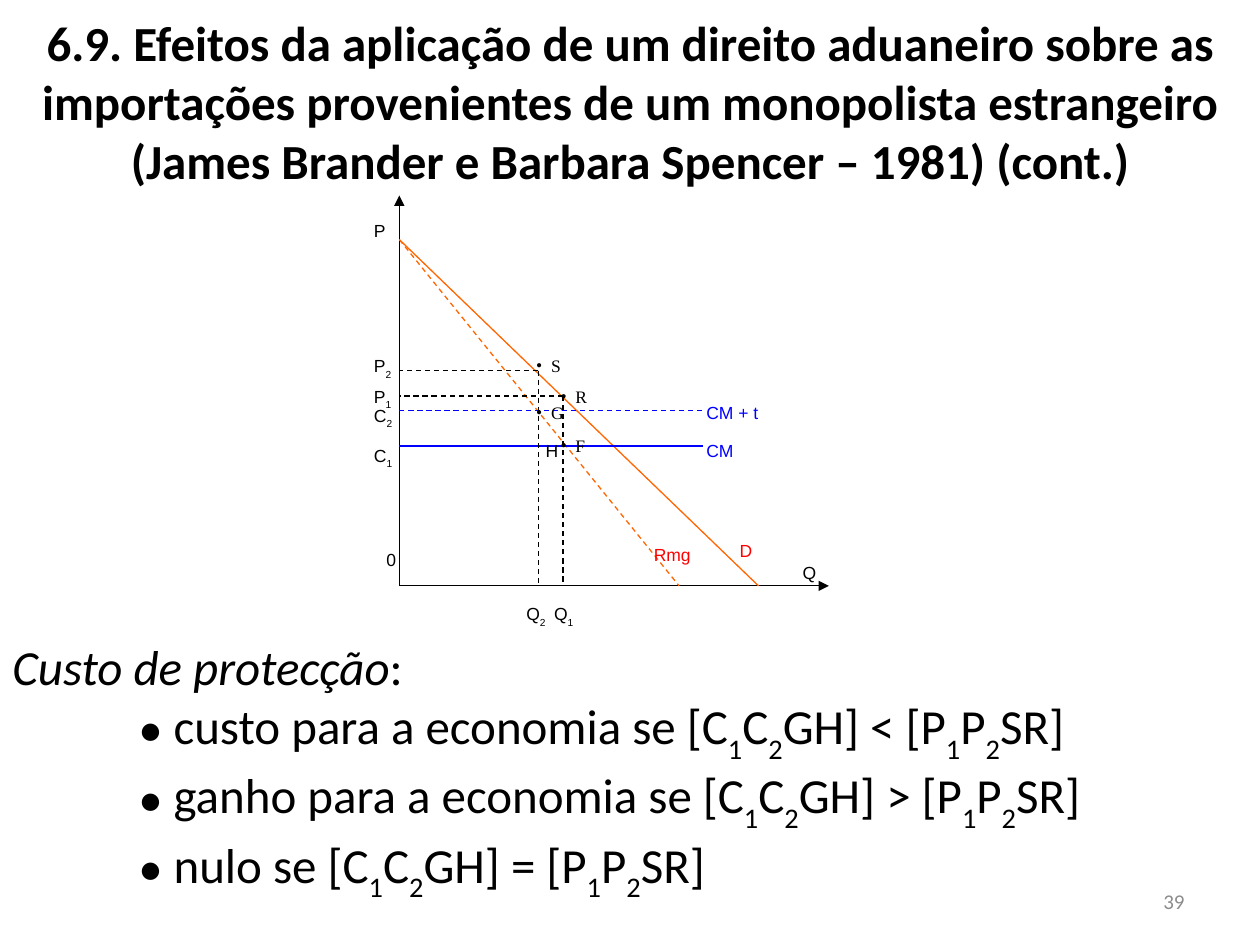
"""Slide on the effects of a tariff on imports from a foreign monopolist."""
from dataclasses import dataclass

from lxml import etree
from pptx import Presentation
from pptx import util as u
from pptx.dml.color import RGBColor
from pptx.enum import dml, shapes, text
from pptx.oxml.ns import qn


@dataclass(frozen=True)
class Theme:
    black: str = "000000"
    grey: str = "8C8C8C"
    orange: str = "FF6600"
    blue: str = "0000FF"
    red: str = "FF0000"
    body_font: str = "Calibri"
    label_font: str = "Arial"
    point_font: str = "Times New Roman"
    body_size: int = 28
    number_size: int = 12
    label_size: int = 10
    line_width: float = 0.75


class SlideBuilder:
    def __init__(self, slide, theme):
        self.slide = slide
        self.theme = theme

    def line(self, start, end, color, dashed=False, arrow=False):
        connector = self.slide.shapes.add_connector(
            shapes.MSO_CONNECTOR.STRAIGHT, *(u.Cm(value) for value in (*start, *end)))
        connector.line.color.rgb = RGBColor.from_string(color)
        connector.line.width = u.Pt(self.theme.line_width)
        if dashed:
            connector.line.dash_style = dml.MSO_LINE.DASH
        if arrow:
            etree.SubElement(connector.line._get_or_add_ln(), qn("a:tailEnd"), type="triangle")
        etree.SubElement(connector._element.spPr, qn("a:effectLst"))

    def text_box(self, left, top, width, height, anchor=text.MSO_ANCHOR.TOP, grow=False):
        box = self.slide.shapes.add_textbox(*(u.Cm(value) for value in (left, top, width, height)))
        frame = box.text_frame
        frame.word_wrap = True
        frame.vertical_anchor = anchor
        if grow:
            frame.auto_size = text.MSO_AUTO_SIZE.SHAPE_TO_FIT_TEXT
        return frame

    def run(self, paragraph, content, font, size, color, bold=False, italic=False, subscript=False):
        run = paragraph.add_run()
        run.text = content
        run.font.name = font
        run.font.size = u.Pt(size)
        run.font.bold = bold
        run.font.italic = italic
        run.font.color.rgb = RGBColor.from_string(color)
        if subscript:
            run._r.get_or_add_rPr().set("baseline", "-30000")

    def formula(self, paragraph, content, *style):
        """Add runs, setting the character after each underscore as a subscript."""
        first, *others = content.split("_")
        self.run(paragraph, first, *style)
        for part in others:
            self.run(paragraph, part[0], *style, subscript=True)
            if part[1:]:
                self.run(paragraph, part[1:], *style)

    def bullet(self, paragraph, margin, hanging, font):
        properties = paragraph._p.get_or_add_pPr()
        properties.set("marL", str(u.Cm(margin)))
        properties.set("indent", str(u.Cm(-hanging)))
        etree.SubElement(properties, qn("a:buFont"), typeface=font)
        etree.SubElement(properties, qn("a:buChar"), char="•")

    def label(self, content, left, top, color):
        frame = self.text_box(left, top, 1.78, 0.76)
        self.formula(frame.paragraphs[0], content, self.theme.label_font, self.theme.label_size, color)

    def point(self, name, left, top):
        theme = self.theme
        paragraph = self.text_box(left, top, 1.78, 0.76).paragraphs[0]
        self.bullet(paragraph, 0.5, 0.3, theme.point_font)
        self.run(paragraph, name, theme.point_font, theme.label_size, theme.black)

    def title(self, content):
        theme = self.theme
        paragraph = self.text_box(0, 0.13, 25.4, 3.84, grow=True).paragraphs[0]
        paragraph.alignment = text.PP_ALIGN.CENTER
        self.run(paragraph, content, theme.body_font, theme.body_size, theme.black, bold=True)

    def slide_number(self, number):
        theme = self.theme
        paragraph = self.text_box(18.21, 17.65, 5.92, 1.02, text.MSO_ANCHOR.MIDDLE).paragraphs[0]
        paragraph.alignment = text.PP_ALIGN.RIGHT
        self.run(paragraph, number, theme.body_font, theme.number_size, theme.grey)

    def conclusions(self, heading, items):
        theme = self.theme
        style = theme.body_font, theme.body_size, theme.black
        frame = self.text_box(0, 13, 25.4, 5.05, text.MSO_ANCHOR.MIDDLE, grow=True)
        self.run(frame.paragraphs[0], heading, *style, italic=True)
        self.run(frame.paragraphs[0], ":", *style)
        for item in items:
            paragraph = frame.add_paragraph()
            self.bullet(paragraph, 3.25, 0.71, theme.body_font)
            self.formula(paragraph, item, *style)


def draw_diagram(builder):
    theme = builder.theme
    axis_x, axis_y = 8.05, 11.81
    origin, choke = (axis_x, axis_y), (axis_x, 4.83)

    for end in ((axis_x, 3.94), (16.71, axis_y)):
        builder.line(origin, end, theme.black, arrow=True)
    for foot, dashed in ((15.29, False), (13.69, True)):
        builder.line(choke, (foot, axis_y), theme.orange, dashed)
    for cost, dashed in ((8.99, False), (8.28, True)):
        builder.line((axis_x, cost), (14.17, cost), theme.blue, dashed)
    for quantity, price in ((11.35, 7.98), (10.85, 7.47)):
        for end in ((quantity, axis_y), (axis_x, price)):
            builder.line((quantity, price), end, theme.black, dashed=True)

    for name, left, top in (("S", 10.36, 7.04), ("R", 10.85, 7.65),
                            ("G", 10.36, 7.98), ("F", 10.85, 8.64)):
        builder.point(name, left, top)

    for name, top in (("P", 4.32), ("P_2", 7.04), ("P_1", 7.65), ("C_2", 8.03), ("C_1", 8.84)):
        builder.label(name, 7.29, top, theme.black)
    for name, left, top, color in (
            ("0", 7.54, 10.95, theme.black),
            ("Q_2", 10.36, 12.04, theme.black),
            ("Q_1", 10.92, 12.04, theme.black),
            ("Q", 15.93, 11.2, theme.black),
            ("H", 10.75, 8.74, theme.black),
            ("D", 14.66, 10.77, theme.red),
            ("Rmg", 12.93, 10.85, theme.red),
            ("CM", 13.99, 8.74, theme.blue),
            ("CM + t", 13.99, 7.98, theme.blue)):
        builder.label(name, left, top, color)


def main():
    presentation = Presentation()
    presentation.slide_width = u.Cm(25.4)
    presentation.slide_height = u.Cm(19.05)
    builder = SlideBuilder(presentation.slides.add_slide(presentation.slide_layouts[6]), Theme())

    builder.title("6.9. Efeitos da aplicação de um direito aduaneiro sobre as importações "
                  "provenientes de um monopolista estrangeiro "
                  "(James Brander e Barbara Spencer – 1981) (cont.)")
    builder.slide_number("39")
    draw_diagram(builder)
    outcomes = (("custo para a economia", "<"), ("ganho para a economia", ">"), ("nulo", "="))
    builder.conclusions("Custo de protecção", [
        f"{outcome} se [C_1C_2GH] {sign} [P_1P_2SR]" for outcome, sign in outcomes])

    presentation.save("out.pptx")


if __name__ == "__main__":
    main()
